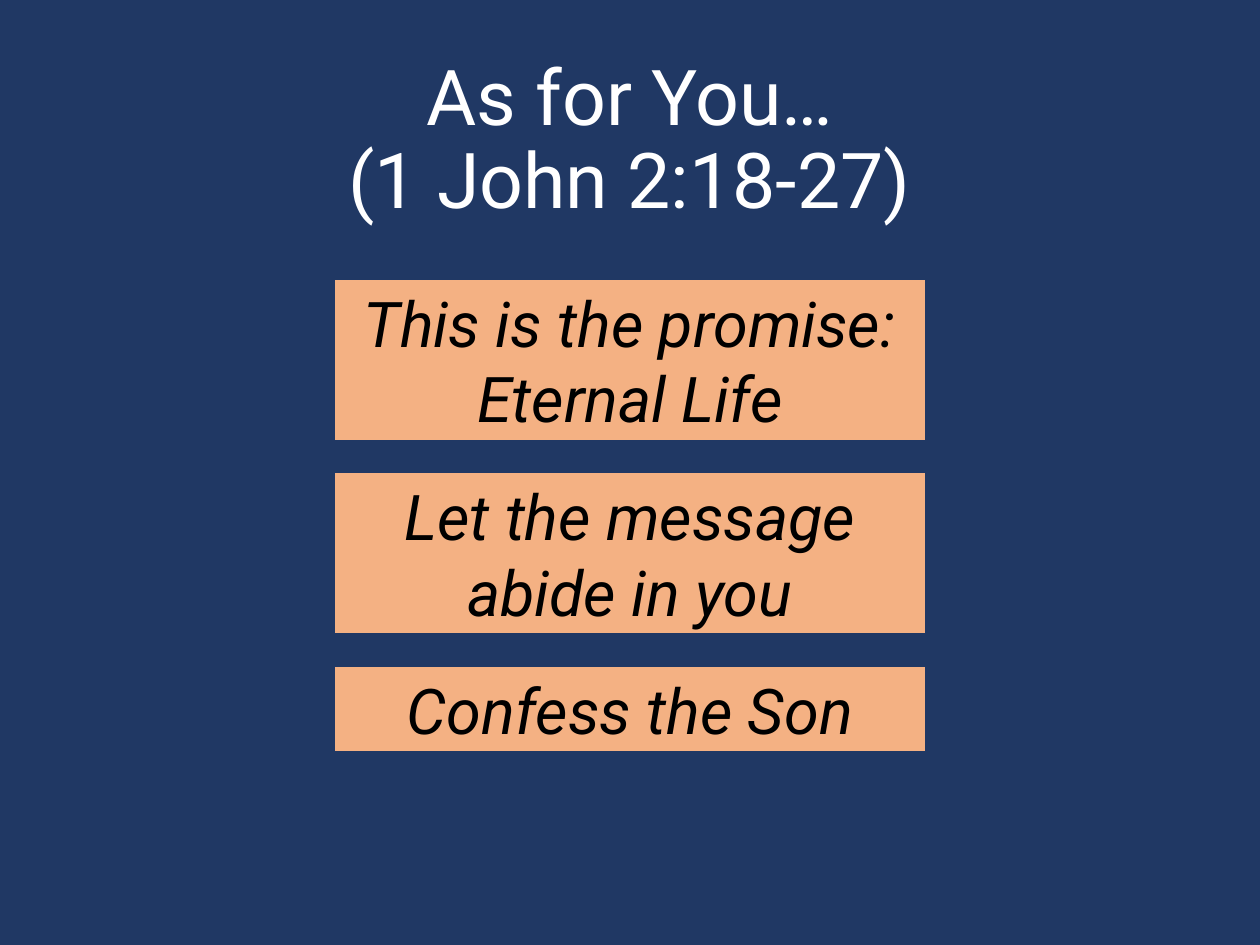
import pptx
import pptx.util
import pptx.dml.color
import pptx.enum.shapes
import pptx.enum.text
from pptx.util import Cm, Pt

COLORS = {"navy": "203864", "peach": "F4B183", "white": "FFFFFF", "black": "000000"}
FONT = "Roboto"
TITLE = "As for You…\v(1 John 2:18-27)"
POINTS = [
    ("This is the promise: Eternal Life", 2),
    ("Let the message abide in you", 2),
    ("Confess the Son", 1),
]
SLIDE_W, SLIDE_H = 25.4, 19.05
BOX_W, BOX_TOP, GAP = 12, 5.59, 0.57
BOX_H = {1: 1.8, 2: 3.33}


def rgb(name):
    return pptx.dml.color.RGBColor.from_string(COLORS[name])


def write(sp, text, size, color, italic=False):
    tf = sp.text_frame
    tf.word_wrap = True
    tf.vertical_anchor = pptx.enum.text.MSO_ANCHOR.MIDDLE
    p = tf.paragraphs[0]
    p.text = text
    p.alignment = pptx.enum.text.PP_ALIGN.CENTER
    p.font.name = FONT
    p.font.size = Pt(size)
    p.font.italic = italic
    p.font.color.rgb = rgb(color)
    return p


prs = pptx.Presentation()
prs.slide_width, prs.slide_height = Cm(SLIDE_W), Cm(SLIDE_H)
s = prs.slides.add_slide(prs.slide_layouts[6])
s.background.fill.solid()
s.background.fill.fore_color.rgb = rgb("navy")

title = s.shapes.add_textbox(Cm(1.75), Cm(1.02), Cm(21.9), Cm(3.68))
write(title, TITLE, 44, "white").line_spacing = 0.9

top = BOX_TOP
for text, lines in POINTS:
    sp = s.shapes.add_shape(
        pptx.enum.shapes.MSO_SHAPE.RECTANGLE,
        Cm((SLIDE_W - BOX_W) / 2), Cm(top), Cm(BOX_W), Cm(BOX_H[lines]))
    sp.shadow.inherit = False
    sp.fill.solid()
    sp.fill.fore_color.rgb = rgb("peach")
    sp.line.color.rgb = rgb("navy")
    sp.line.width = Pt(3)
    write(sp, text, 36, "black", italic=True)
    sp.text_frame.auto_size = pptx.enum.text.MSO_AUTO_SIZE.SHAPE_TO_FIT_TEXT
    top += BOX_H[lines] + GAP

prs.save("out.pptx")
